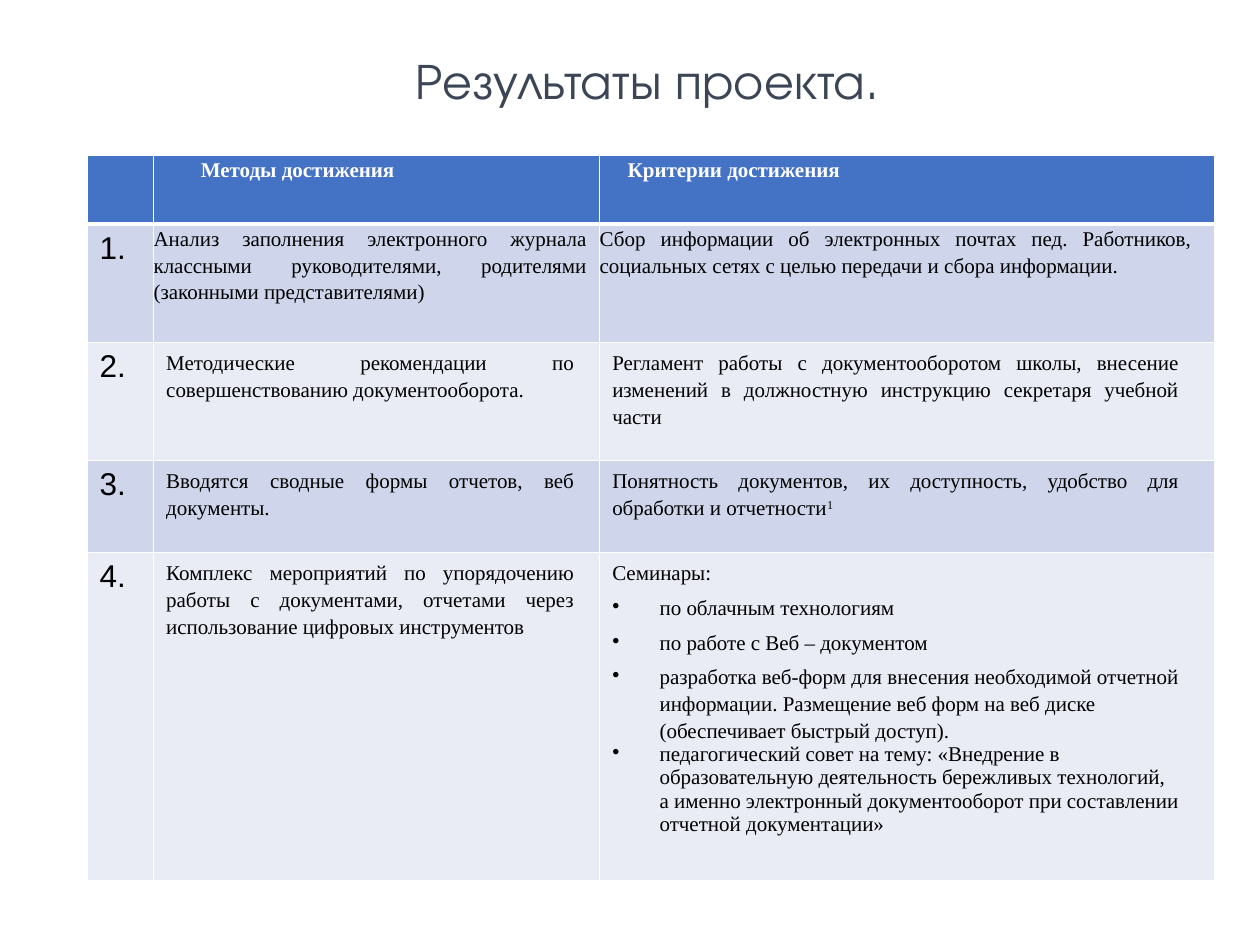
from lxml import etree
from pptx import Presentation
from pptx.dml.color import RGBColor
from pptx.enum.text import MSO_ANCHOR, MSO_AUTO_SIZE, PP_ALIGN
from pptx.oxml.ns import qn
from pptx.util import Pt

LEFT, CENTER, JUSTIFY = PP_ALIGN.LEFT, PP_ALIGN.CENTER, PP_ALIGN.JUSTIFY
MIDDLE = MSO_ANCHOR.MIDDLE
NO_FIT = MSO_AUTO_SIZE.NONE

WHITE = RGBColor(0xFF, 0xFF, 0xFF)
BLACK = RGBColor(0, 0, 0)
SLATE = RGBColor(0x3B, 0x45, 0x55)
BLUE = RGBColor(0x44, 0x72, 0xC4)
BANDS = RGBColor(0xCF, 0xD5, 0xEA), RGBColor(0xE9, 0xEB, 0xF5)

SERIF, SANS, HEAD = "Times New Roman", "Arial", "TeX Gyre Adventor"
WIDTHS = 38.1, 254.9, 351.4
HEIGHTS = 39.5, 67.5, 67.5, 52.5, 187.5
INDENTS = 27, 16
TAILS = 7.2, 13
BULLET = 27

HEADS = "Методы достижения", "Критерии достижения"
ROWS = [
    ("Анализ заполнения электронного журнала классными руководителями, "
     "родителями (законными представителями)",
     "Сбор информации об электронных почтах пед. Работников, социальных "
     "сетях с целью передачи и сбора информации."),
    ("Методические рекомендации по совершенствованию документооборота.",
     "Регламент работы с документооборотом школы, внесение изменений в "
     "должностную инструкцию секретаря учебной части"),
    ("Вводятся сводные формы отчетов, веб документы.",
     "Понятность документов, их доступность, удобство для обработки и "
     "отчетности"),
    ("Комплекс мероприятий по упорядочению работы с документами, отчетами "
     "через использование цифровых инструментов",
     "Семинары:"),
]
NOTE = "1"
TOPICS = [
    "по облачным технологиям",
    "по работе с Веб – документом",
    "разработка веб-форм для внесения необходимой отчетной информации. "
    "Размещение веб форм на веб диске (обеспечивает быстрый доступ).",
    "педагогический совет на тему: «Внедрение в образовательную деятельность "
    "бережливых технологий, а именно электронный документооборот при "
    "составлении отчетной документации»",
]


def style(para, face, size, color, bold=False):
    font = para.font
    font.name, font.size, font.bold = face, Pt(size), bold
    font.color.rgb = color


def indent(para, left=0, first=0, right=0):
    props = para._p.get_or_add_pPr()
    for key, size in (("marL", left), ("indent", first), ("marR", right)):
        props.set(key, str(Pt(size)))


def write(para, text, align=JUSTIFY, color=BLACK, bold=False):
    para.text = text
    para.alignment = align
    para.line_spacing = 1.15
    style(para, SERIF, 12, color, bold)


def add_topic(cell, text, last):
    para = cell.text_frame.add_paragraph()
    indent(para, BULLET, -BULLET, TAILS[1])
    mark = etree.SubElement(para._p.get_or_add_pPr(), qn("a:buChar"))
    mark.set("char", "•")
    write(para, text, LEFT)
    if last:
        para.line_spacing = 1.0
    else:
        para.space_before = Pt(4.5)


def edge(cell, low=1):
    """White lines on all four sides; low is the width of the bottom one."""
    props = cell._tc.get_or_add_tcPr()
    for spot, (side, wide) in enumerate(
            (("L", 1), ("R", 1), ("T", 1), ("B", low))):
        line = etree.Element(qn("a:ln" + side), w=str(Pt(wide)))
        fill = etree.SubElement(line, qn("a:solidFill"))
        etree.SubElement(fill, qn("a:srgbClr"), val=str(WHITE))
        props.insert(spot, line)


def paint(cell, color, low=1):
    cell.fill.solid()
    cell.fill.fore_color.rgb = color
    edge(cell, low)


def clear_inset(cell):
    cell.margin_left = cell.margin_right = 0
    cell.margin_top = cell.margin_bottom = 0


def add_title(slide, left, top, width, height):
    title = slide.shapes.title
    title.left, title.top = Pt(left), Pt(top)
    title.width, title.height = Pt(width), Pt(height)
    frame = title.text_frame
    frame.auto_size = NO_FIT
    frame.vertical_anchor = MIDDLE
    frame.margin_bottom = Pt(40)
    para = frame.paragraphs[0]
    para.text = "Результаты проекта."
    para.alignment = CENTER
    para.line_spacing = 0.9
    style(para, HEAD, 28.8, SLATE)


def fill_head(table):
    paint(table.cell(0, 0), BLUE, 3)
    for col, (text, left) in enumerate(zip(HEADS, INDENTS), 1):
        cell = table.cell(0, col)
        paint(cell, BLUE, 3)
        clear_inset(cell)
        para = cell.text_frame.paragraphs[0]
        indent(para, left)
        write(para, text, LEFT, WHITE, True)


def fill_row(table, row, texts):
    color = BANDS[(row - 1) % 2]
    count = table.cell(row, 0)
    paint(count, color)
    para = count.text_frame.paragraphs[0]
    para.text = f"{row}."
    para.alignment = LEFT
    style(para, SANS, 18, BLACK)
    for col, (text, tail) in enumerate(zip(texts, TAILS), 1):
        cell = table.cell(row, col)
        paint(cell, color)
        if row == 1:
            clear_inset(cell)
        para = cell.text_frame.paragraphs[0]
        indent(para, right=tail)
        write(para, text)


def add_results(slide, left, top):
    table = slide.shapes.add_table(
        len(HEIGHTS), len(WIDTHS), Pt(left), Pt(top),
        Pt(sum(WIDTHS)), Pt(sum(HEIGHTS))).table
    for col, width in zip(table.columns, WIDTHS):
        col.width = Pt(width)
    for row, height in zip(table.rows, HEIGHTS):
        row.height = Pt(height)
    fill_head(table)
    for row, texts in enumerate(ROWS, 1):
        fill_row(table, row, texts)

    run = table.cell(3, 2).text_frame.paragraphs[0].add_run()
    run.text = NOTE
    run._r.get_or_add_rPr().set("baseline", "30000")

    cell = table.cell(4, 2)
    cell.text_frame.paragraphs[0].alignment = LEFT
    for text in TOPICS:
        add_topic(cell, text, text == TOPICS[-1])


def main():
    deck = Presentation()
    deck.slide_width, deck.slide_height = Pt(720), Pt(540)
    slide = deck.slides.add_slide(deck.slide_layouts[5])
    add_title(slide, 59.8, 43.2, 620.6, 45.4)
    add_results(slide, 49.7, 88.6)
    deck.save("out.pptx")


if __name__ == "__main__":
    main()
